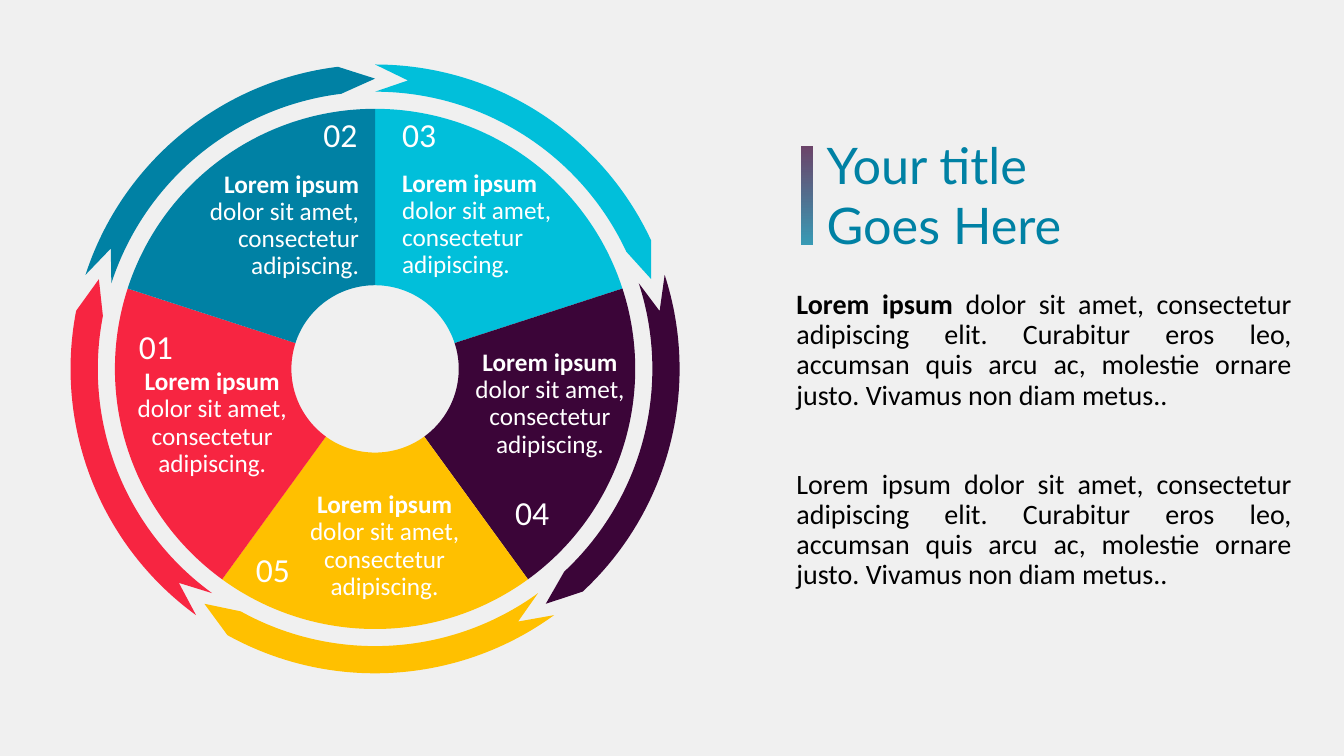
from dataclasses import dataclass
from math import cos, radians, sin, tan

from lxml.etree import SubElement
from pptx import Presentation
from pptx.dml.color import RGBColor
from pptx.enum.shapes import MSO_SHAPE
from pptx.enum.text import MSO_AUTO_SIZE, PP_ALIGN
from pptx.oxml.ns import qn
from pptx.util import Inches, Pt


@dataclass(frozen=True)
class Theme:
    background: str = "F0F0F0"
    white: str = "FFFFFF"
    black: str = "000000"
    blue: str = "0081A4"
    cyan: str = "01BFDA"
    purple: str = "3B0538"
    yellow: str = "FFC000"
    red: str = "F72541"
    body_font: str = "Calibri"
    title_font: str = "Lato"
    title_size: int = 36
    number_size: int = 24
    body_size: int = 20
    segment_size: int = 18


CENTER = (3.72, 3.66)
STEP = 72  # degrees per segment
SHOULDER = 65  # degrees from an arrow's tail to its head
HUB, WHEEL = 0.83, 2.58  # segment radii
RING_IN, RING_MID, RING_OUT = 2.75, 2.88, 3.02  # arrow radii


def polar(radius, angle):
    """Point at a clockwise angle from twelve o'clock."""
    turn = radians(angle)
    return CENTER[0] + radius * sin(turn), CENTER[1] - radius * cos(turn)


def arc(radius, start, end):
    """Two control points and the end point of one cubic curve."""
    reach = 4 / 3 * tan(radians(end - start) / 4)
    (x1, y1), (x2, y2) = polar(radius, start), polar(radius, end)
    cx, cy = CENTER
    return [(x1 - reach * (y1 - cy), y1 + reach * (x1 - cx)),
            (x2 + reach * (y2 - cy), y2 - reach * (x2 - cx)),
            (x2, y2)]


class SlideBuilder:
    def __init__(self, slide, theme):
        self.slide, self.theme = slide, theme
        slide.background.fill.solid()
        slide.background.fill.fore_color.rgb = RGBColor.from_string(theme.background)

    def outline(self, start, steps, color):
        """A step of one point is a line, a step of three points a curve."""
        corners = [(Inches(x), Inches(y)) for step in steps for x, y in step]
        builder = self.slide.shapes.build_freeform(*map(Inches, start))
        builder.add_line_segments(corners, close=True)
        shape = builder.convert_to_shape()
        shape.shadow.inherit = False
        shape.fill.solid()
        shape.fill.fore_color.rgb = RGBColor.from_string(color)
        shape.line.fill.background()
        # Merge the three points of each curve into one cubic segment
        lines = iter(list(shape._element.iter(qn("a:lnTo"))))
        for step in steps:
            group = [next(lines) for _ in step]
            if len(group) == 3:
                curve = SubElement(group[0].getparent(), qn("a:cubicBezTo"))
                group[0].addprevious(curve)
                for line in group:
                    curve.append(line[0])
                    line.getparent().remove(line)

    def segment(self, start, color):
        end = start + STEP
        self.outline(polar(WHEEL, start),
                     [arc(WHEEL, start, end), [polar(HUB, end)], arc(HUB, end, start)],
                     color)

    def ring_arrow(self, start, color):
        head = start + SHOULDER
        self.outline(polar(RING_OUT, start),
                     [arc(RING_OUT, start, head),
                      [polar(RING_MID, start + STEP)],
                      [polar(RING_IN, head)],
                      arc(RING_IN, head, start),
                      [polar(RING_MID, start + 6.5)]],
                     color)

    def text(self, box, paragraphs, size, color, font=None, align=PP_ALIGN.LEFT,
             spacing=None, before=(), grow=False):
        """Each paragraph is a list of (text, bold) runs."""
        frame = self.slide.shapes.add_textbox(*map(Inches, box)).text_frame
        frame.word_wrap = True
        if grow:
            frame.auto_size = MSO_AUTO_SIZE.SHAPE_TO_FIT_TEXT
        for i, runs in enumerate(paragraphs):
            paragraph = frame.add_paragraph() if i else frame.paragraphs[0]
            paragraph.alignment = align
            paragraph.font.size = Pt(size)
            paragraph.font.name = font or self.theme.body_font
            paragraph.font.color.rgb = RGBColor.from_string(color)
            if spacing:
                paragraph.line_spacing = spacing
            if before:
                paragraph.space_before = Pt(before[i])
            for words, bold in runs:
                run = paragraph.add_run()
                run.text = words
                if bold:
                    run.font.bold = True

    def gradient_bar(self, box, stops):
        """Vertical gradient; each stop is (color, opacity percent)."""
        bar = self.slide.shapes.add_shape(MSO_SHAPE.RECTANGLE, *map(Inches, box))
        bar.shadow.inherit = False
        bar.line.fill.background()
        bar.fill.gradient()
        bar.fill.gradient_angle = 270
        for stop, (color, _) in zip(bar.fill.gradient_stops, stops):
            stop.color.rgb = RGBColor.from_string(color)
        colors = bar._element.spPr.find(qn("a:gradFill")).iter(qn("a:srgbClr"))
        for element, (_, opacity) in zip(colors, stops):
            SubElement(element, qn("a:alpha")).set("val", str(opacity * 1000))


def main():
    theme = Theme()
    prs = Presentation()
    prs.slide_width, prs.slide_height = Inches(13.33), Inches(7.5)
    page = SlideBuilder(prs.slides.add_slide(prs.slide_layouts[6]), theme)

    # Wheel segments, clockwise from the top:
    # number, color, number position, caption position, caption alignment
    segments = [
        ("03", theme.cyan, (3.89, 1.08), (3.89, 1.64), PP_ALIGN.LEFT),
        ("04", theme.purple, (5.01, 4.83), (4.54, 3.42), PP_ALIGN.CENTER),
        ("05", theme.yellow, (2.44, 5.4), (2.9, 4.83), PP_ALIGN.CENTER),
        ("01", theme.red, (1.28, 3.18), (1.19, 3.61), PP_ALIGN.CENTER),
        ("02", theme.blue, (3.11, 1.08), (1.83, 1.65), PP_ALIGN.RIGHT),
    ]
    lead = ("Lorem ipsum ", True)
    caption = [lead, ("dolor sit amet, consectetur adipiscing.", False)]
    for i, (_, color, *_rest) in enumerate(segments):
        page.ring_arrow(i * STEP, color)
        page.segment(i * STEP, color)
    for number, _, number_at, caption_at, align in segments:
        page.text((*number_at, 0.61, 0.5), [[(number, False)]],
                  theme.number_size, theme.white, grow=True)
        page.text((*caption_at, 1.83, 0.94), [caption], theme.segment_size,
                  theme.white, align=align, spacing=0.9, before=[10])

    # Body copy
    body = ("dolor sit amet, consectetur adipiscing elit. Curabitur eros leo, "
            "accumsan quis arcu ac, molestie ornare justo. "
            "Vivamus non diam metus..")
    page.text((7.8, 2.83, 5.11, 4.45),
              [[lead, (body, False)], [("Lorem ipsum " + body, False)]],
              theme.body_size, theme.black, align=PP_ALIGN.JUSTIFY,
              spacing=0.9, before=[10, 42])

    # Title with accent bar
    page.text((8.1, 1.28, 4.69, 1.31),
              [[("Your title", False)], [("Goes Here", False)]],
              theme.title_size, theme.blue, font=theme.title_font, grow=True)
    page.gradient_bar((7.95, 1.45, 0.11, 0.98),
                      [(theme.purple, 73), (theme.blue, 77)])

    prs.save("out.pptx")


if __name__ == "__main__":
    main()
